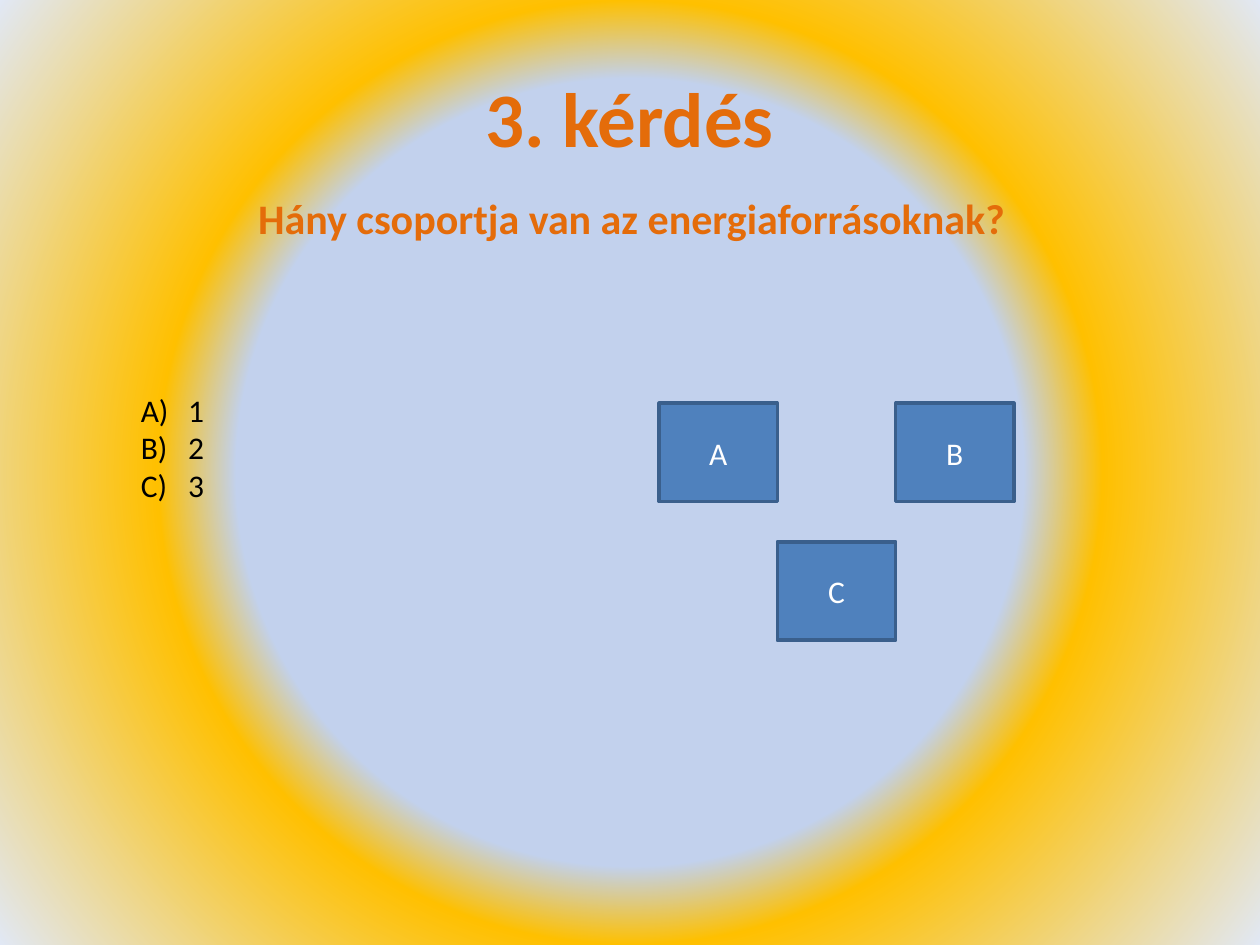
from dataclasses import dataclass

from pptx import Presentation
from pptx.dml.color import RGBColor
from pptx.enum.shapes import MSO_SHAPE
from pptx.enum.text import MSO_ANCHOR, MSO_AUTO_SIZE, PP_ALIGN
from pptx.oxml import parse_xml
from pptx.oxml.ns import nsdecls
from pptx.slide import Slide
from pptx.text.text import TextFrame
from pptx.util import Pt

BUTTON_SHAPE = MSO_SHAPE.ACTION_BUTTON_CUSTOM
MIDDLE, TOP = MSO_ANCHOR.MIDDLE, MSO_ANCHOR.TOP
CENTER, LEFT = PP_ALIGN.CENTER, PP_ALIGN.LEFT
FIT_SHAPE = MSO_AUTO_SIZE.SHAPE_TO_FIT_TEXT


@dataclass(frozen=True)
class Theme:
    font: str = "Calibri"
    heading: str = "E46C0A"
    body: str = "000000"
    button_text: str = "FFFFFF"
    button_fill: str = "4F81BD"
    button_line: str = "3A5F8C"
    glow: tuple = ((50, "C2D1ED"), (60, "FFC000"), (100, "E1E8F5"))
    title_size: int = 44
    question_size: int = 24
    body_size: int = 18


@dataclass(frozen=True)
class Box:
    left: float
    top: float
    width: float
    height: float

    def lengths(self) -> list:
        return [Pt(value) for value in (self.left, self.top, self.width, self.height)]


@dataclass(frozen=True)
class Button:
    label: str
    column: int
    row: int


THEME = Theme()
TITLE_BOX = Box(36, 21.6, 648, 90)
QUESTION_BOX = Box(140.4, 106.6, 450, 36)
ANSWERS_BOX = Box(73.4, 219.6, 168.5, 72.7)
ANSWERS = ("1", "2", "3")
ANSWER_INDENT = 27
FIRST_BUTTON = Box(376.6, 230.4, 67.6, 56.2)
BUTTON_ROW_STEP = 79.2
BUTTONS = (Button("A", 0, 0), Button("C", 1, 1), Button("B", 2, 0))


def set_background(slide: Slide) -> None:
    """Fill the slide with a circular gradient spreading from its centre."""
    stops = "".join(
        f'<a:gs pos="{position * 1000}"><a:srgbClr val="{color}"/></a:gs>'
        for position, color in THEME.glow
    )
    background = parse_xml(
        f'<p:bg {nsdecls("p", "a")}><p:bgPr><a:gradFill rotWithShape="1">'
        f'<a:gsLst>{stops}</a:gsLst><a:path path="circle">'
        '<a:fillToRect l="50000" t="50000" r="50000" b="50000"/></a:path>'
        "</a:gradFill><a:effectLst/></p:bgPr></p:bg>"
    )
    slide.element.cSld.insert(0, background)


def write_lines(frame: TextFrame, lines: tuple, size: int, color: str,
                alignment: PP_ALIGN, bold: bool = False) -> None:
    frame.text = "\n".join(lines)
    for paragraph in frame.paragraphs:
        paragraph.alignment = alignment
        font = paragraph.font
        font.name, font.size, font.bold = THEME.font, Pt(size), bold
        font.color.rgb = RGBColor.from_string(color)


def add_text(slide: Slide, box: Box, lines: tuple, size: int, color: str,
             alignment: PP_ALIGN = LEFT, bold: bool = False) -> TextFrame:
    frame = slide.shapes.add_textbox(*box.lengths()).text_frame
    frame.word_wrap = True
    write_lines(frame, lines, size, color, alignment, bold)
    return frame


def letter_paragraphs(frame: TextFrame) -> None:
    """Number the paragraphs A), B), C) with a hanging indent."""
    for paragraph in frame.paragraphs:
        properties = paragraph._p.get_or_add_pPr()
        properties.set("marL", str(Pt(ANSWER_INDENT)))
        properties.set("indent", str(-Pt(ANSWER_INDENT)))
        numbering = parse_xml(f'<a:buAutoNum {nsdecls("a")} type="alphaUcParenR"/>')
        properties.insert_element_before(numbering, "a:tabLst", "a:defRPr", "a:extLst")


def add_button(slide: Slide, button: Button) -> None:
    box = Box(
        FIRST_BUTTON.left + button.column * FIRST_BUTTON.width,
        FIRST_BUTTON.top + button.row * BUTTON_ROW_STEP,
        FIRST_BUTTON.width,
        FIRST_BUTTON.height,
    )
    shape = slide.shapes.add_shape(BUTTON_SHAPE, *box.lengths())
    shape.shadow.inherit = False
    shape.fill.solid()
    shape.fill.fore_color.rgb = RGBColor.from_string(THEME.button_fill)
    shape.line.color.rgb = RGBColor.from_string(THEME.button_line)
    shape.line.width = Pt(2)
    shape.text_frame.vertical_anchor = MIDDLE
    write_lines(shape.text_frame, (button.label,), THEME.body_size,
                THEME.button_text, CENTER)


def main() -> None:
    presentation = Presentation()
    presentation.slide_width, presentation.slide_height = Pt(720), Pt(540)
    slide = presentation.slides.add_slide(presentation.slide_layouts[6])
    set_background(slide)

    title = add_text(slide, TITLE_BOX, ("3. kérdés",), THEME.title_size,
                     THEME.heading, CENTER, bold=True)
    title.vertical_anchor = MIDDLE
    question = add_text(slide, QUESTION_BOX, ("Hány csoportja van az energiaforrásoknak?",),
                        THEME.question_size, THEME.heading, bold=True)
    answers = add_text(slide, ANSWERS_BOX, ANSWERS, THEME.body_size, THEME.body)
    letter_paragraphs(answers)
    for frame in (question, answers):
        frame.vertical_anchor = TOP
        frame.auto_size = FIT_SHAPE

    for button in BUTTONS:
        add_button(slide, button)
    presentation.save("out.pptx")


if __name__ == "__main__":
    main()
